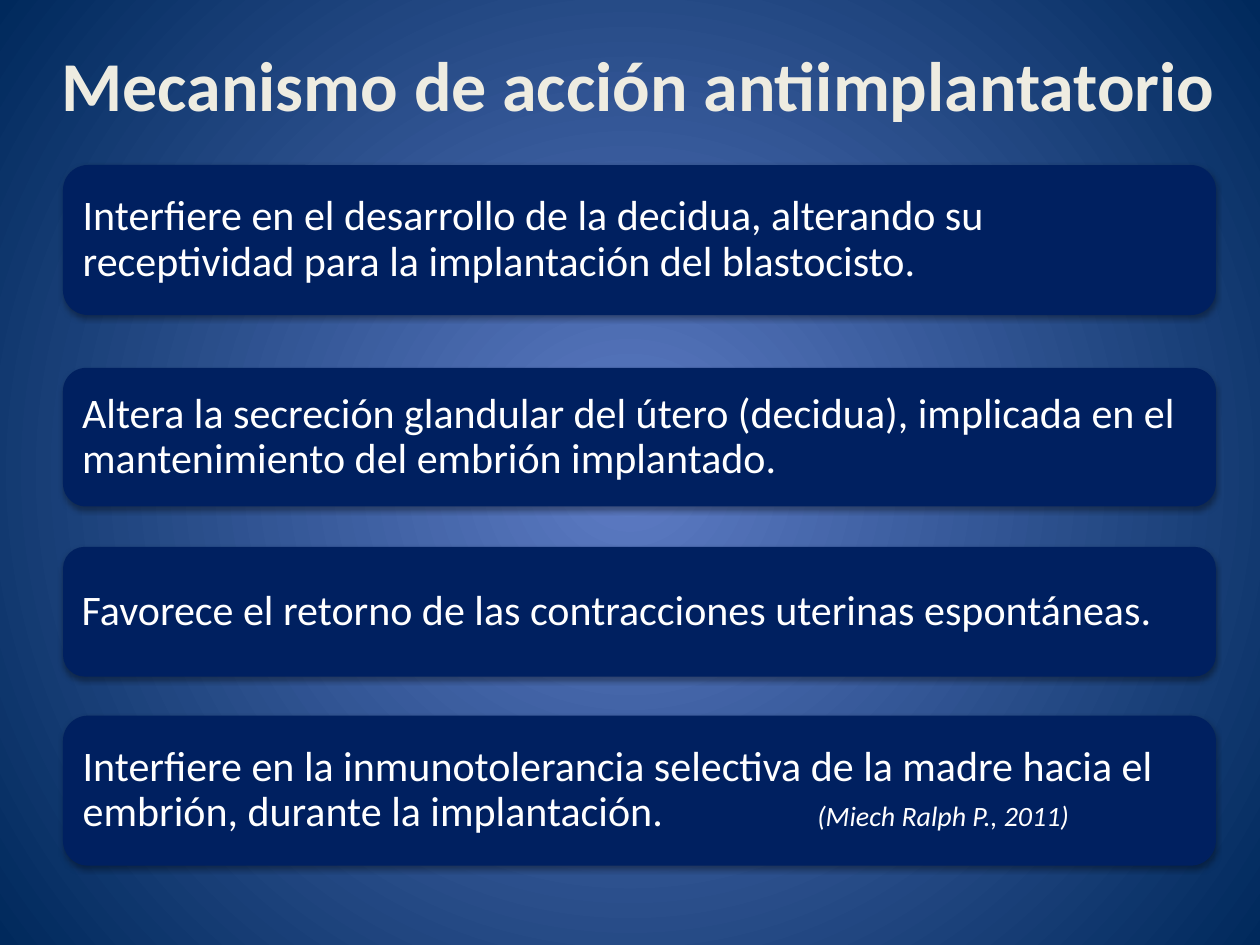
from lxml import etree
from pptx import Presentation
from pptx.dml.color import RGBColor
from pptx.enum.shapes import MSO_SHAPE as SHAPE
from pptx.enum.text import MSO_ANCHOR as ANCHOR, PP_ALIGN as ALIGN
from pptx.oxml import parse_xml
from pptx.oxml.ns import nsdecls, qn
from pptx.util import Inches, Pt

TITLE = "Mecanismo de acción antiimplantatorio"
TITLE_FORMAT = {"name": "Calibri", "size": Pt(40), "bold": True}
BODY_FORMAT = {"name": "Calibri", "size": Pt(24)}
CITE_FORMAT = {"name": "Calibri", "size": Pt(16), "italic": True}
CARD_LEFT, CARD_WIDTH, CITE_TAB = 0.5, 9.15, 5.83
CARDS = [
    (1.31, 1.19, "Interfiere en el desarrollo de la decidua, alterando su "
     "receptividad para la implantación del blastocisto.", None),
    (2.92, 1.1, "Altera la secreción glandular del útero (decidua), implicada "
     "en el mantenimiento del embrión implantado.", None),
    (4.34, 1.03, "Favorece el retorno de las contracciones uterinas "
     "espontáneas.", None),
    (5.68, 1.19, "Interfiere en la inmunotolerancia selectiva de la madre "
     "hacia el embrión, durante la implantación.", "(Miech Ralph P., 2011)"),
]


def rgb(color):
    return RGBColor.from_string(color)


def add_run(p, text, color, fmt):
    r = p.add_run()
    r.text = text
    for key, value in fmt.items():
        setattr(r.font, key, value)
    r.font.color.rgb = rgb(color)


def set_frame(tf, inset):
    values = {"word_wrap": True, "vertical_anchor": ANCHOR.MIDDLE}
    values.update({f"margin_{side}": Inches(inset)
                   for side in ("left", "right", "top", "bottom")})
    for key, value in values.items():
        setattr(tf, key, value)


def set_background(s, inner, outer):
    stops = "".join(f'<a:gs pos="{pos}"><a:srgbClr val="{color}"/></a:gs>'
                    for pos, color in ((0, inner), (100000, outer)))
    s.background.fill.solid()
    solid = s.background.fill._xPr.find(qn("a:solidFill"))
    solid.getparent().replace(solid, parse_xml(
        f'<a:gradFill {nsdecls("a")} rotWithShape="1"><a:gsLst>{stops}</a:gsLst>'
        '<a:path path="circle"><a:fillToRect l="50000" t="50000" r="50000" '
        'b="50000"/></a:path></a:gradFill>'))


def add_shadow(sp):
    sp.shadow.inherit = False
    sp._element.spPr.find(qn("a:effectLst")).append(parse_xml(
        f'<a:outerShdw {nsdecls("a")} blurRad="{Pt(3.1)}" dist="{Pt(1.8)}" '
        'dir="5400000" rotWithShape="0"><a:srgbClr val="000000">'
        '<a:alpha val="35000"/></a:srgbClr></a:outerShdw>'))


def add_tab_stop(p, position):
    tabs = etree.SubElement(p._p.get_or_add_pPr(), qn("a:tabLst"))
    etree.SubElement(tabs, qn("a:tab"), pos=str(Inches(position)), algn="l")


def add_title(s):
    box = s.shapes.add_textbox(Inches(0.33), Inches(0.25), Inches(9.47), Inches(0.83))
    set_frame(box.text_frame, 0.05)
    p = box.text_frame.paragraphs[0]
    p.alignment = ALIGN.CENTER
    add_run(p, TITLE, "EEECE1", TITLE_FORMAT)


def add_card(s, top, height, text, cite):
    sp = s.shapes.add_shape(SHAPE.ROUNDED_RECTANGLE, Inches(CARD_LEFT), Inches(top),
                            Inches(CARD_WIDTH), Inches(height))
    sp.fill.solid()
    sp.fill.fore_color.rgb = rgb("002060")
    sp.line.fill.background()
    add_shadow(sp)
    set_frame(sp.text_frame, 0.1)
    p = sp.text_frame.paragraphs[0]
    p.alignment = ALIGN.LEFT
    p.line_spacing = 0.9
    add_run(p, text + ("\t" if cite else ""), "FFFFFF", BODY_FORMAT)
    if cite:
        add_tab_stop(p, CITE_TAB)
        add_run(p, cite, "FFFFFF", CITE_FORMAT)


def main():
    prs = Presentation()
    prs.slide_width, prs.slide_height = Inches(10), Inches(7.5)
    s = prs.slides.add_slide(prs.slide_layouts[6])
    set_background(s, "5E7CC5", "00295C")
    add_title(s)
    for card in CARDS:
        add_card(s, *card)
    prs.save("out.pptx")


if __name__ == "__main__":
    main()
